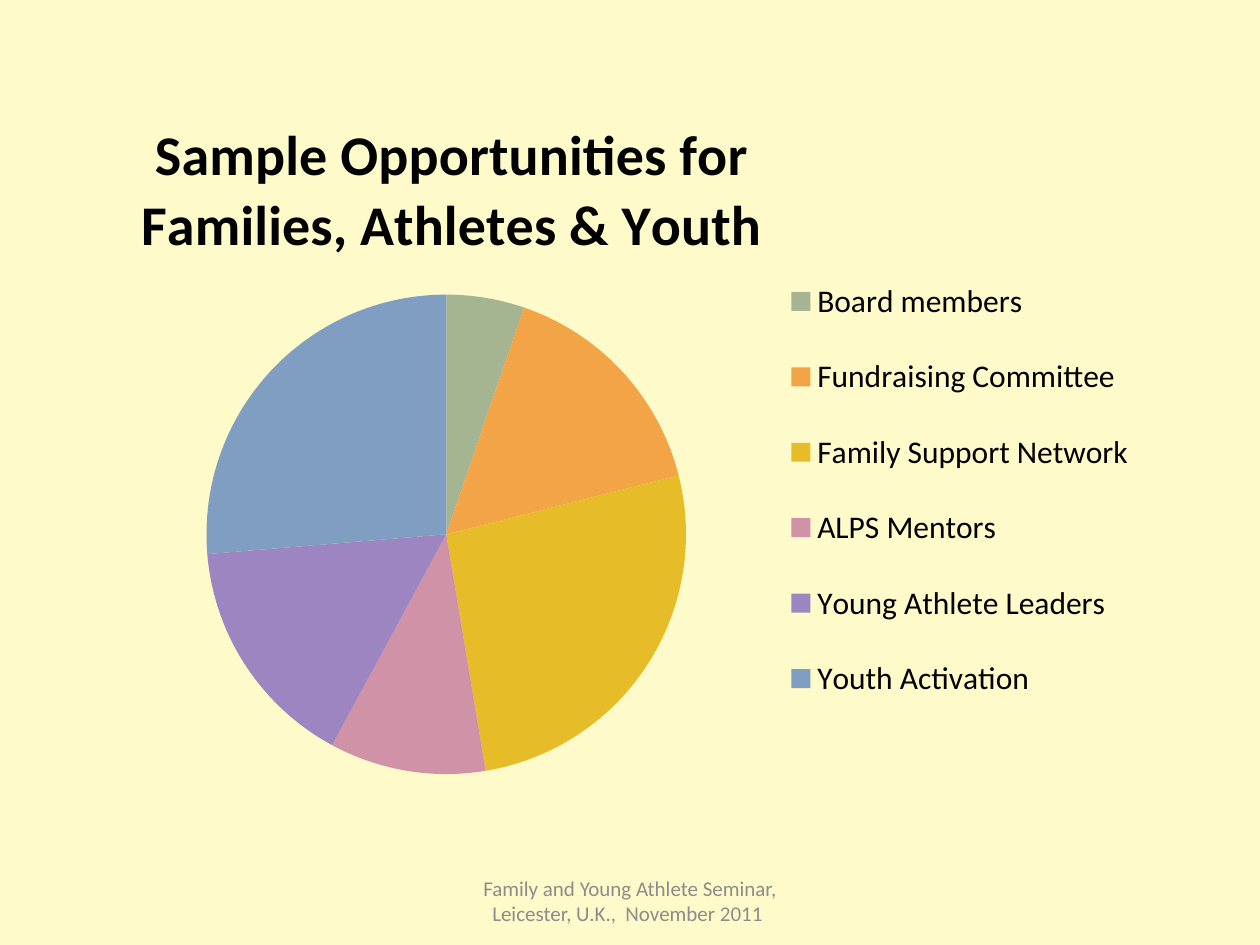
"""Build a slide with a pie chart of volunteer opportunities."""
from lxml import etree
from pptx import Presentation
from pptx import util as u
from pptx.chart import data as chart_data
from pptx.dml.color import RGBColor
from pptx.enum import chart as kinds, text
from pptx.oxml import ns

COLORS = {"background": "FEFAC9", "text": "000000", "footer": "8C8C8C"}
FONT = "Calibri"
TITLE = "Sample Opportunities for\nFamilies, Athletes & Youth"
FOOTER = "Family and Young Athlete Seminar, Leicester, U.K.,  November 2011 "
OPPORTUNITIES = [
    ("Board members", 5, "A5B592"),
    ("Fundraising Committee", 15, "F3A447"),
    ("Family Support Network", 25, "E7BC29"),
    ("ALPS Mentors", 10, "D092A7"),
    ("Young Athlete Leaders", 15, "9C85C0"),
    ("Youth Activation", 25, "809EC2"),
]
CHART_BOX = (36, 60, 648, 392)
FOOTER_BOX = (246, 500, 228, 29)
TITLE_PLACE = {"x": 42.5, "y": 6}
PIE_PLACE = {"x": 82, "y": 108.2, "w": 274, "h": 274.4}
LEGEND_PLACE = {"x": 402.4, "y": 80, "w": 220.3, "h": 280}


def points(box):
    return [u.Pt(length) for length in box]


def style(font, size, color, bold=False):
    font.name, font.size, font.bold = FONT, u.Pt(size), bold
    font.color.rgb = RGBColor.from_string(color)


def place(part, position, lengths, inner=False):
    for old in part.findall(ns.qn("c:layout")):
        part.remove(old)
    layout = etree.Element(ns.qn("c:layout"))
    manual = etree.SubElement(layout, ns.qn("c:manualLayout"))
    width, height = CHART_BOX[2:]
    whole = {"x": width, "y": height, "w": width, "h": height}
    settings = [("layoutTarget", "inner")] if inner else []
    settings += [("xMode", "edge"), ("yMode", "edge")]
    settings += [(name, length / whole[name]) for name, length in lengths.items()]
    for name, value in settings:
        etree.SubElement(manual, ns.qn(f"c:{name}")).set("val", str(value))
    part.insert(position, layout)


def add_pie(page):
    names, values, fills = zip(*OPPORTUNITIES)
    data = chart_data.CategoryChartData()
    data.categories = names
    data.add_series("Series 1", values)
    frame = page.shapes.add_chart(kinds.XL_CHART_TYPE.PIE, *points(CHART_BOX), data)
    chart = frame.chart
    style(chart.font, 18, COLORS["text"])
    chart.has_title = True
    title = chart.chart_title.text_frame
    title.text = TITLE
    for para in title.paragraphs:
        para.alignment = text.PP_ALIGN.CENTER
        for span in para.runs:
            style(span.font, 32, COLORS["text"], bold=True)
    chart.has_legend = True
    chart.legend.position = kinds.XL_LEGEND_POSITION.RIGHT
    chart.legend.include_in_layout = False
    style(chart.legend.font, 18, COLORS["text"])
    plot = chart.plots[0]
    plot.vary_by_categories = True
    for index, color in enumerate(fills):
        fill = plot.series[0].points[index].format.fill
        fill.solid()
        fill.fore_color.rgb = RGBColor.from_string(color)
    root = chart.element.find(ns.qn("c:chart"))
    place(root.find(ns.qn("c:title")), 1, TITLE_PLACE)
    place(root.find(ns.qn("c:plotArea")), 0, PIE_PLACE, inner=True)
    place(root.find(ns.qn("c:legend")), 1, LEGEND_PLACE)


def add_footer(page):
    frame = page.shapes.add_textbox(*points(FOOTER_BOX)).text_frame
    frame.word_wrap = True
    frame.vertical_anchor = text.MSO_ANCHOR.MIDDLE
    frame.text = FOOTER
    para = frame.paragraphs[0]
    para.alignment = text.PP_ALIGN.CENTER
    style(para.runs[0].font, 12, COLORS["footer"])


def main():
    deck = Presentation()
    deck.slide_width, deck.slide_height = u.Pt(720), u.Pt(540)
    page = deck.slides.add_slide(deck.slide_layouts[6])
    fill = page.background.fill
    fill.solid()
    fill.fore_color.rgb = RGBColor.from_string(COLORS["background"])
    add_pie(page)
    add_footer(page)
    deck.save("out.pptx")


if __name__ == "__main__":
    main()
